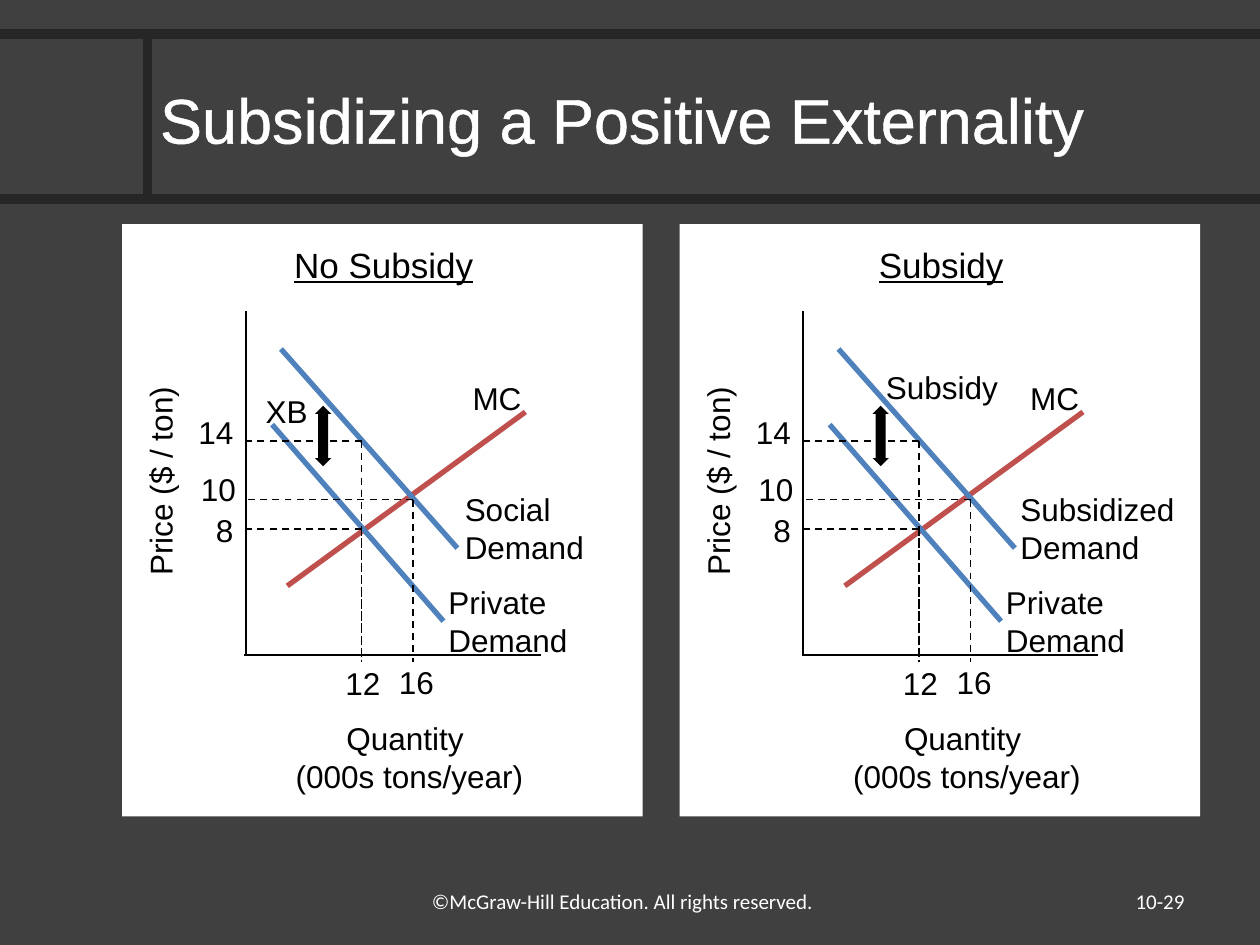
from lxml import etree
from pptx import Presentation
from pptx.dml.color import RGBColor
from pptx.enum.dml import MSO_LINE
from pptx.enum.shapes import MSO_CONNECTOR, MSO_SHAPE
from pptx.enum.text import MSO_ANCHOR, MSO_AUTO_SIZE, PP_ALIGN
from pptx.oxml.ns import qn
from pptx.util import Inches, Pt

DASH = MSO_LINE.DASH
STRAIGHT = MSO_CONNECTOR.STRAIGHT
RECTANGLE, UP_DOWN = MSO_SHAPE.RECTANGLE, MSO_SHAPE.UP_DOWN_ARROW
LEFT, CENTER, RIGHT = PP_ALIGN.LEFT, PP_ALIGN.CENTER, PP_ALIGN.RIGHT
TOP, MIDDLE = MSO_ANCHOR.TOP, MSO_ANCHOR.MIDDLE
GROW, FIXED = MSO_AUTO_SIZE.SHAPE_TO_FIT_TEXT, MSO_AUTO_SIZE.NONE

CHARCOAL = RGBColor(0x40, 0x40, 0x40)
RULE = RGBColor(0x26, 0x26, 0x26)
WHITE = RGBColor(0xFF, 0xFF, 0xFF)
BLACK = RGBColor(0, 0, 0)
DEMAND_BLUE = RGBColor(0x4F, 0x81, 0xBD)
COST_RED = RGBColor(0xC0, 0x50, 0x4D)

# The slide is a grid of 100 columns by 75 rows
COLUMNS, ROWS = 100, 75
PANEL_STEP = 44.25


class Deck:
    """Holds the style and the slide; lengths are grid columns and rows."""

    def __init__(self):
        self.presentation = Presentation()
        self.presentation.slide_width = Inches(10)
        self.presentation.slide_height = Inches(7.5)
        self.column = self.presentation.slide_width / COLUMNS
        self.row = self.presentation.slide_height / ROWS
        self.slide = self.presentation.slides.add_slide(
            self.presentation.slide_layouts[5])
        self.slide.background.fill.solid()
        self.slide.background.fill.fore_color.rgb = CHARCOAL
        self.origin = 0

    def place(self, x, y):
        return round((self.origin + x) * self.column), round(y * self.row)

    def extent(self, width, height):
        return round(width * self.column), round(height * self.row)

    def set_text(self, frame, words, size, color, font, align, underline=None):
        paragraph = frame.paragraphs[0]
        paragraph.text = words
        paragraph.alignment = align
        paragraph.font.name = font
        paragraph.font.size = Pt(size)
        paragraph.font.color.rgb = color
        paragraph.font.underline = underline
        return paragraph

    def title(self, words, x, y, width, height):
        title = self.slide.shapes.title
        title.left, title.top = self.place(x, y)
        title.width, title.height = self.extent(width, height)
        frame = title.text_frame
        frame.vertical_anchor = MIDDLE
        frame.auto_size = FIXED
        paragraph = self.set_text(frame, words, 36, WHITE, "Arial", LEFT)
        # White outline around the letters
        properties = paragraph.runs[0]._r.get_or_add_rPr()
        outline = etree.SubElement(properties, qn("a:ln"), w=str(Pt(1.45)))
        fill = etree.SubElement(outline, qn("a:solidFill"))
        etree.SubElement(fill, qn("a:srgbClr"), val=str(WHITE))

    def label(self, words, x, y, width, height=4, align=CENTER, size=18,
              color=BLACK, font="Arial", underline=None, rotation=0,
              anchor=TOP, fit=GROW):
        box = self.slide.shapes.add_textbox(
            *self.place(x, y), *self.extent(width, height))
        box.rotation = rotation
        frame = box.text_frame
        frame.word_wrap = True
        frame.auto_size = fit
        frame.vertical_anchor = anchor
        self.set_text(frame, words, size, color, font, align, underline)

    def line(self, start, end, color=BLACK, weight=1, dash=None):
        line = self.slide.shapes.add_connector(
            STRAIGHT, *self.place(*start), *self.place(*end))
        line.line.color.rgb = color
        line.line.width = Pt(weight)
        if dash:
            line.line.dash_style = dash
        etree.SubElement(line._element.spPr, qn("a:effectLst"))

    def shape(self, kind, x, y, width, height, color, adjustments=()):
        shape = self.slide.shapes.add_shape(
            kind, *self.place(x, y), *self.extent(width, height))
        shape.shadow.inherit = False
        shape.fill.solid()
        shape.fill.fore_color.rgb = color
        shape.line.fill.background()
        for index, value in enumerate(adjustments):
            shape.adjustments[index] = value


def quantity_x(quantity):
    return 28.7 + (quantity - 12) * 1.02


def price_y(price):
    return 39.65 - (price - 10) * 1.16


def market_panel(deck, heading, upper_demand, upper_x, upper_width,
                 gap, gap_x, gap_y, gap_width):
    deck.shape(RECTANGLE, 9.7, 17.8, 41.3, 47, WHITE)
    deck.label(heading, 18.7, 18.8, 23.5, 4.4, size=20, underline=True)

    # Axes and their names
    deck.line((19.4, 52), (42.9, 52))
    deck.line((19.5, 24.7), (19.5, 52))
    deck.label("Quantity \n(000s tons/year)", 19.8, 56.6, 25.4, 7.1)
    deck.label("Price ($ / ton)", 0.6, 36.2, 24.2, rotation=270)

    # Marginal cost and the two demand curves
    deck.line((41.7, 32.7), (22.8, 46.5), COST_RED, 3)
    deck.line((21.6, 33.7), (35.2, 49.3), DEMAND_BLUE, 3)
    deck.line((22.3, 27.7), (36.3, 43.5), DEMAND_BLUE, 3)
    deck.label("MC", 35.6, 29.6, 7.7)
    deck.label("Private Demand", 34.6, 45.8, 14.1, 7.1, LEFT)
    deck.label(upper_demand, upper_x, 38.4, upper_width, 7.1, LEFT)

    # Vertical gap between the demand curves
    deck.label(gap, gap_x, gap_y, gap_width)
    deck.shape(UP_DOWN, 25, 32.2, 1.3, 4.8, BLACK, (0.5, 0.616))

    # Guides from each point to both axes
    for quantity, price in ((12, 8), (12, 14), (16, 10)):
        x, y = quantity_x(quantity), price_y(price)
        deck.line((x, y), (19.4, y), dash=DASH)
        deck.line((x, y), (x, 52.5), dash=DASH)

    # Axis values
    for price, x, y in ((14, 12.1, 32.3), (10, 12.3, 36.8), (8, 12.1, 40.1)):
        deck.label(str(price), x, y, 7.4, align=RIGHT)
    for quantity, x, y, width in ((12, 25.2, 52.2, 7.2), (16, 30, 52.1, 6.1)):
        deck.label(str(quantity), x, y, width)


def main():
    deck = Deck()

    # Title band
    for start, end in (((0, 15.8), (100, 15.8)), ((11.7, 2.7), (11.7, 15.8)),
                       ((0, 2.7), (100, 2.7))):
        deck.line(start, end, RULE, 5.5)
    deck.title("Subsidizing a Positive Externality", 11.7, 3, 88.3, 12.8)

    # Footer
    deck.label("©McGraw-Hill Education. All rights reserved.", 33.3, 70,
               45.6, 3.5, LEFT, 12, WHITE, "Calibri", fit=FIXED)
    deck.label("10-29", 71.7, 69.5, 23.3, 4, RIGHT, 12, WHITE, "Calibri",
               anchor=MIDDLE, fit=FIXED)

    # Side-by-side markets
    panels = (
        ("No Subsidy", "Social Demand", 35.9, 14.1, "XB", 20, 30.6, 5.5),
        ("Subsidy", "Subsidized Demand", 35.75, 14.6,
         "Subsidy", 24.65, 28.7, 11.7),
    )
    for position, panel in enumerate(panels):
        deck.origin = position * PANEL_STEP
        market_panel(deck, *panel)

    deck.presentation.save("out.pptx")


if __name__ == "__main__":
    main()
